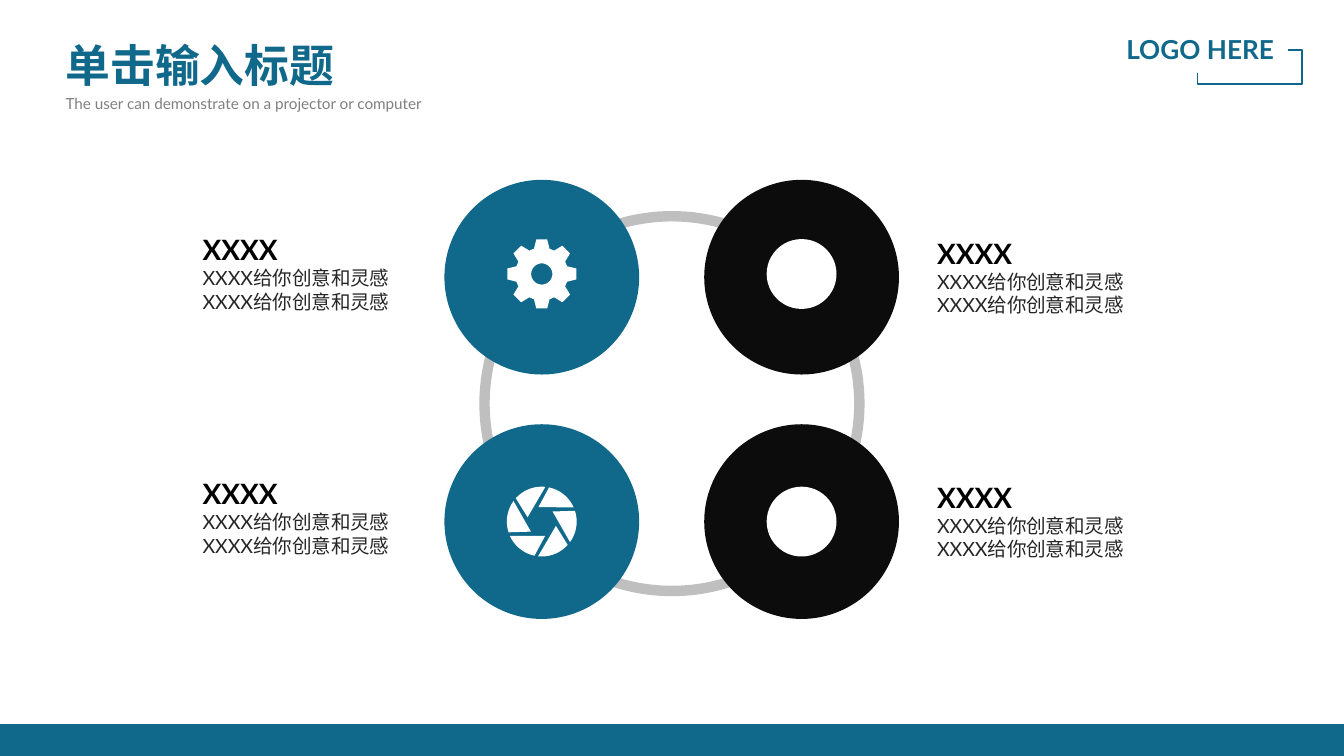
from math import cos, radians, sin

from lxml.etree import SubElement
from pptx import Presentation
from pptx.dml.color import RGBColor
from pptx.enum.shapes import MSO_CONNECTOR, MSO_SHAPE
from pptx.enum.text import PP_ALIGN
from pptx.oxml.ns import qn
from pptx.util import Cm, Pt

COLORS = {
    "teal": "10688B", "bracket": "0D678B", "black": "0C0C0C", "ring": "BFBFBF",
    "white": "FFFFFF", "heading": "000000", "body": "262626", "subtitle": "808080",
}
FONT = "Lato"
ICON_RADIUS = 0.66


def set_color(color_format, name):
    color_format.rgb = RGBColor.from_string(COLORS[name])


def paint(shape, color):
    shape.shadow.inherit = False
    shape.fill.solid()
    set_color(shape.fill.fore_color, color)
    shape.line.fill.background()
    return shape


def add_filled(page, kind, left, top, width, height, color):
    shape = page.shapes.add_shape(kind, Cm(left), Cm(top), Cm(width), Cm(height))
    return paint(shape, color)


def add_text_box(page, left, top, width, height, wrap=True):
    box = page.shapes.add_textbox(Cm(left), Cm(top), Cm(width), Cm(height))
    box.text_frame.word_wrap = wrap
    return box.text_frame


def write(para, text, size, color, bold=False, align=PP_ALIGN.LEFT, spacing=None):
    para.alignment = align
    para.line_spacing = spacing
    span = para.add_run()
    span.text = text
    span.font.name = FONT
    span.font.size = Pt(size)
    span.font.bold = bold
    set_color(span.font.color, color)


def polar(center_x, center_y, radius, angle):
    """Point at an angle in degrees, clockwise from twelve o'clock."""
    turn = radians(angle)
    return Cm(center_x + radius * sin(turn)), Cm(center_y - radius * cos(turn))


def add_outline(page, contours, color):
    builder = page.shapes.build_freeform(*contours[0][0])
    for index, points in enumerate(contours):
        if index:
            builder.move_to(*points[0])
        builder.add_line_segments(points[1:], close=True)
    paint(builder.convert_to_shape(), color)


def add_gear(page, center_x, center_y):
    tooth = [(0.5, -17), (ICON_RADIUS, -9), (ICON_RADIUS, 9), (0.5, 17)]
    rim = [polar(center_x, center_y, radius, step + angle)
           for step in range(0, 360, 45) for radius, angle in tooth]
    hole = [polar(center_x, center_y, 0.2, angle) for angle in range(0, -360, -10)]
    add_outline(page, [rim, hole], "white")


def add_aperture(page, center_x, center_y):
    blades = []
    for step in range(0, 360, 60):
        arc = [polar(center_x, center_y, ICON_RADIUS, step + angle)
               for angle in range(-48, 7, 6)]
        blades.append(arc + [polar(center_x, center_y, 0.28, step - 73)])
    add_outline(page, blades, "white")


def add_plain_icon(page, center_x, center_y):
    add_filled(page, MSO_SHAPE.OVAL, center_x - ICON_RADIUS, center_y - ICON_RADIUS,
               2 * ICON_RADIUS, 2 * ICON_RADIUS, "white")


def add_diagram(page, left, top):
    disc, step_x, step_y = 3.68, 4.91, 4.62
    ring = add_filled(page, MSO_SHAPE.DONUT, left + 0.66, top + 0.59, 7.28, 7.28, "ring")
    ring.adjustments[0] = 0.027
    icons = [[add_gear, add_plain_icon], [add_aperture, add_plain_icon]]
    for row, (icon_row, lift) in enumerate(zip(icons, (0.06, 0))):
        for column, (add_icon, color) in enumerate(zip(icon_row, ("teal", "black"))):
            x, y = left + column * step_x, top + row * step_y
            add_filled(page, MSO_SHAPE.OVAL, x, y, disc, disc, color)
            add_icon(page, x + disc / 2, y + disc / 2 - lift)


def add_caption(page, left, top):
    frame = add_text_box(page, left, top, 4.27, 1.8)
    write(frame.paragraphs[0], "XXXX", size=15, color="heading", bold=True)
    write(frame.add_paragraph(), "XXXX给你创意和灵感" * 2, size=10.5, color="body")


def add_header(page, left, top):
    title = add_text_box(page, left, top, 5.66, 1.27, wrap=False)
    write(title.paragraphs[0], "单击输入标题", size=24, color="teal", bold=True)
    subtitle = add_text_box(page, left, top + 1.02, 13.67, 0.64)
    write(subtitle.paragraphs[0], "The user can demonstrate on a projector or computer",
          size=8.2, color="subtitle", spacing=1.14)


def add_logo_label(page, left, top):
    label = add_text_box(page, left, top, 3.4, 0.86)
    write(label.paragraphs[0], "LOGO HERE", size=14, color="teal", bold=True,
          align=PP_ALIGN.RIGHT)
    # The bracket is a four-part elbow, laid out upright and turned a quarter.
    bracket = page.shapes.add_connector(
        MSO_CONNECTOR.ELBOW, Cm(left + 2.77), Cm(top + 1.5), Cm(left + 2.34), Cm(top - 0.2))
    bracket.line.width = Pt(0.75)
    set_color(bracket.line.color, "bracket")
    properties = bracket._element.spPr
    SubElement(properties, qn("a:effectLst"))
    properties.find(qn("a:xfrm")).set("rot", "5400000")
    geometry = properties.find(qn("a:prstGeom"))
    geometry.set("prst", "bentConnector4")
    guides = geometry.find(qn("a:avLst"))
    for name, value in (("adj1", -49500), ("adj2", 116200)):
        SubElement(guides, qn("a:gd"), name=name, fmla=f"val {value}")


def main():
    deck = Presentation()
    deck.slide_width, deck.slide_height = Cm(25.4), Cm(14.29)
    page = deck.slides.add_slide(deck.slide_layouts[6])
    add_diagram(page, 8.4, 3.4)
    for left, top in ((3.58, 4.27), (17.46, 4.34)):
        for row in range(2):
            add_caption(page, left, top + row * 4.61)
    add_header(page, 0.99, 0.58)
    add_logo_label(page, 20.93, 0.51)
    add_filled(page, MSO_SHAPE.RECTANGLE, 0, 13.69, 25.4, 0.6, "teal")
    deck.save("out.pptx")


if __name__ == "__main__":
    main()
